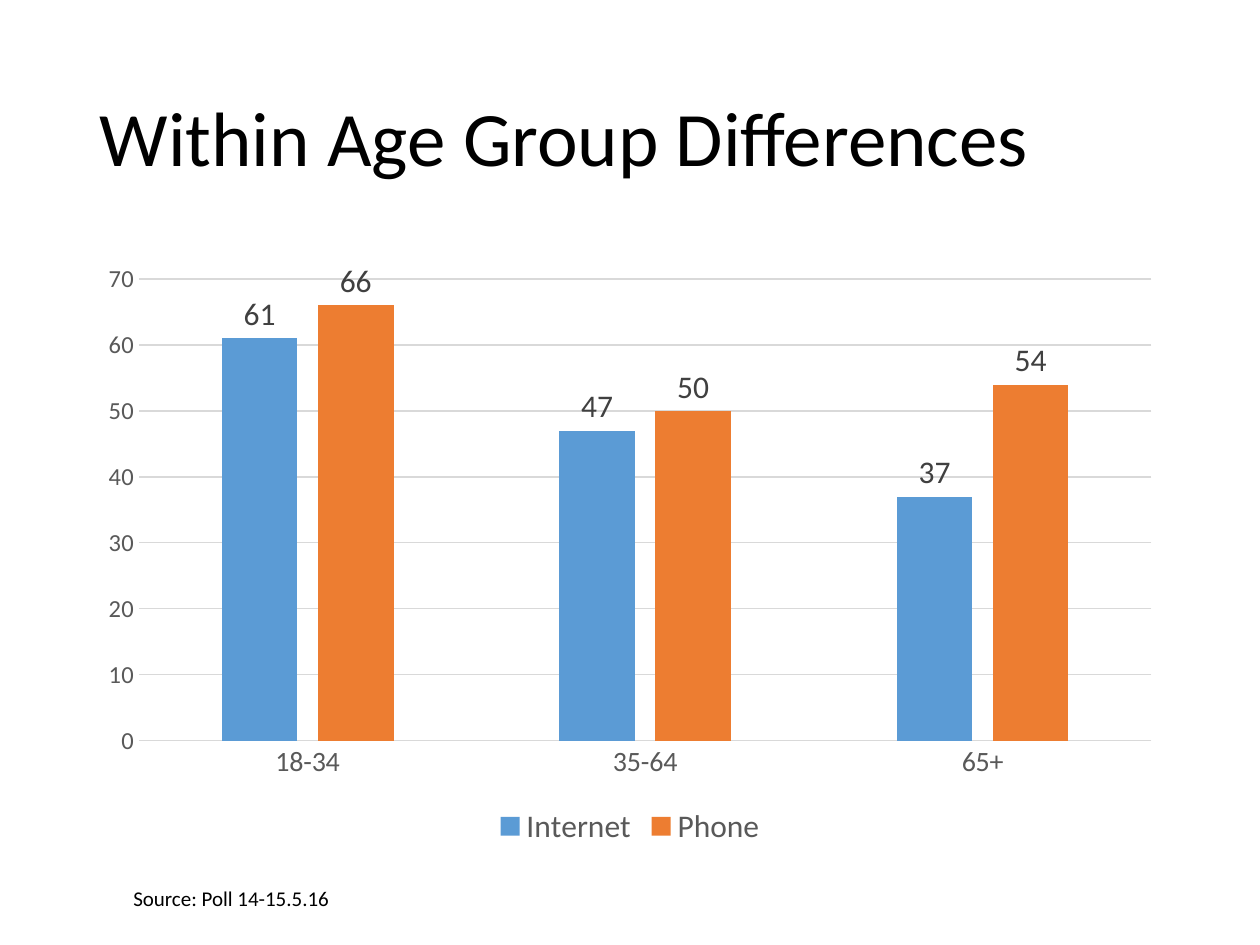
"""Build a slide with a column chart of internet and phone results by age group."""
from dataclasses import dataclass

from pptx import Presentation
from pptx import util as u
from pptx.chart import data as chart_data
from pptx.dml.color import RGBColor
from pptx.enum import chart as charts
from pptx.enum import text

FONT = "Calibri"
BLACK = RGBColor(0x00, 0x00, 0x00)
DARK_GRAY = RGBColor(0x40, 0x40, 0x40)
GRAY = RGBColor(0x59, 0x59, 0x59)
LIGHT_GRAY = RGBColor(0xD9, 0xD9, 0xD9)
BLUE = RGBColor(0x5B, 0x9B, 0xD5)
ORANGE = RGBColor(0xED, 0x7D, 0x31)


@dataclass(frozen=True)
class Mode:
    name: str
    values: tuple[int, ...]
    color: RGBColor


AGE_GROUPS = ("18-34", "35-64", "65+")
MODES = (
    Mode("Internet", (61, 47, 37), BLUE),
    Mode("Phone", (66, 50, 54), ORANGE),
)


def format_font(font, *, size: int, color: RGBColor) -> None:
    font.name = FONT
    font.size = u.Pt(size)
    font.bold = False
    font.color.rgb = color


def format_line(line, color: RGBColor) -> None:
    line.color.rgb = color
    line.width = u.Pt(0.75)


def write_text(box, words: str, *, size: int, anchor, spacing: float = 1.0) -> None:
    frame = box.text_frame
    frame.word_wrap = True
    frame.vertical_anchor = anchor
    para = frame.paragraphs[0]
    para.alignment = text.PP_ALIGN.LEFT
    para.line_spacing = spacing
    span = para.add_run()
    span.text = words
    format_font(span.font, size=size, color=BLACK)


def style_series(series, mode: Mode) -> None:
    series.invert_if_negative = False
    series.format.fill.solid()
    series.format.fill.fore_color.rgb = mode.color
    labels = series.data_labels
    labels.show_value = True
    labels.position = charts.XL_LABEL_POSITION.OUTSIDE_END
    format_font(labels.font, size=18, color=DARK_GRAY)


def style_axes(chart) -> None:
    for axis, size in ((chart.category_axis, 16), (chart.value_axis, 14)):
        axis.major_tick_mark = charts.XL_TICK_MARK.NONE
        axis.minor_tick_mark = charts.XL_TICK_MARK.NONE
        format_font(axis.tick_labels.font, size=size, color=GRAY)
    format_line(chart.category_axis.format.line, LIGHT_GRAY)
    scale = chart.value_axis
    scale.minimum_scale, scale.maximum_scale, scale.major_unit = 0, 70, 10
    scale.format.line.fill.background()
    format_line(scale.major_gridlines.format.line, LIGHT_GRAY)


def add_age_chart(page) -> None:
    data = chart_data.CategoryChartData()
    data.categories = AGE_GROUPS
    for mode in MODES:
        data.add_series(mode.name, mode.values)
    chart = page.shapes.add_chart(
        charts.XL_CHART_TYPE.COLUMN_CLUSTERED,
        u.Inches(0.69), u.Inches(2), u.Inches(8.62), u.Inches(4.76), data,
    ).chart
    format_font(chart.font, size=10, color=BLACK)
    chart.has_title = False
    chart.has_legend = True
    chart.legend.position = charts.XL_LEGEND_POSITION.BOTTOM
    chart.legend.include_in_layout = False
    format_font(chart.legend.font, size=18, color=GRAY)
    plot = chart.plots[0]
    plot.vary_by_categories = False
    plot.gap_width = 219
    plot.overlap = -27
    for series, mode in zip(plot.series, MODES):
        style_series(series, mode)
    style_axes(chart)


def main() -> None:
    deck = Presentation()
    deck.slide_width, deck.slide_height = u.Inches(10), u.Inches(7.5)
    page = deck.slides.add_slide(deck.slide_layouts[5])
    title = page.shapes.title
    title.left, title.top = u.Inches(0.69), u.Inches(0.4)
    title.width, title.height = u.Inches(8.62), u.Inches(1.45)
    write_text(title, "Within Age Group Differences", size=44,
               anchor=text.MSO_ANCHOR.MIDDLE, spacing=0.9)
    add_age_chart(page)
    source = page.shapes.add_textbox(
        u.Inches(0.96), u.Inches(6.98), u.Inches(4.83), u.Inches(0.3))
    write_text(source, "Source: Poll 14-15.5.16", size=12,
               anchor=text.MSO_ANCHOR.TOP)
    source.text_frame.auto_size = text.MSO_AUTO_SIZE.SHAPE_TO_FIT_TEXT
    deck.save("out.pptx")


if __name__ == "__main__":
    main()
